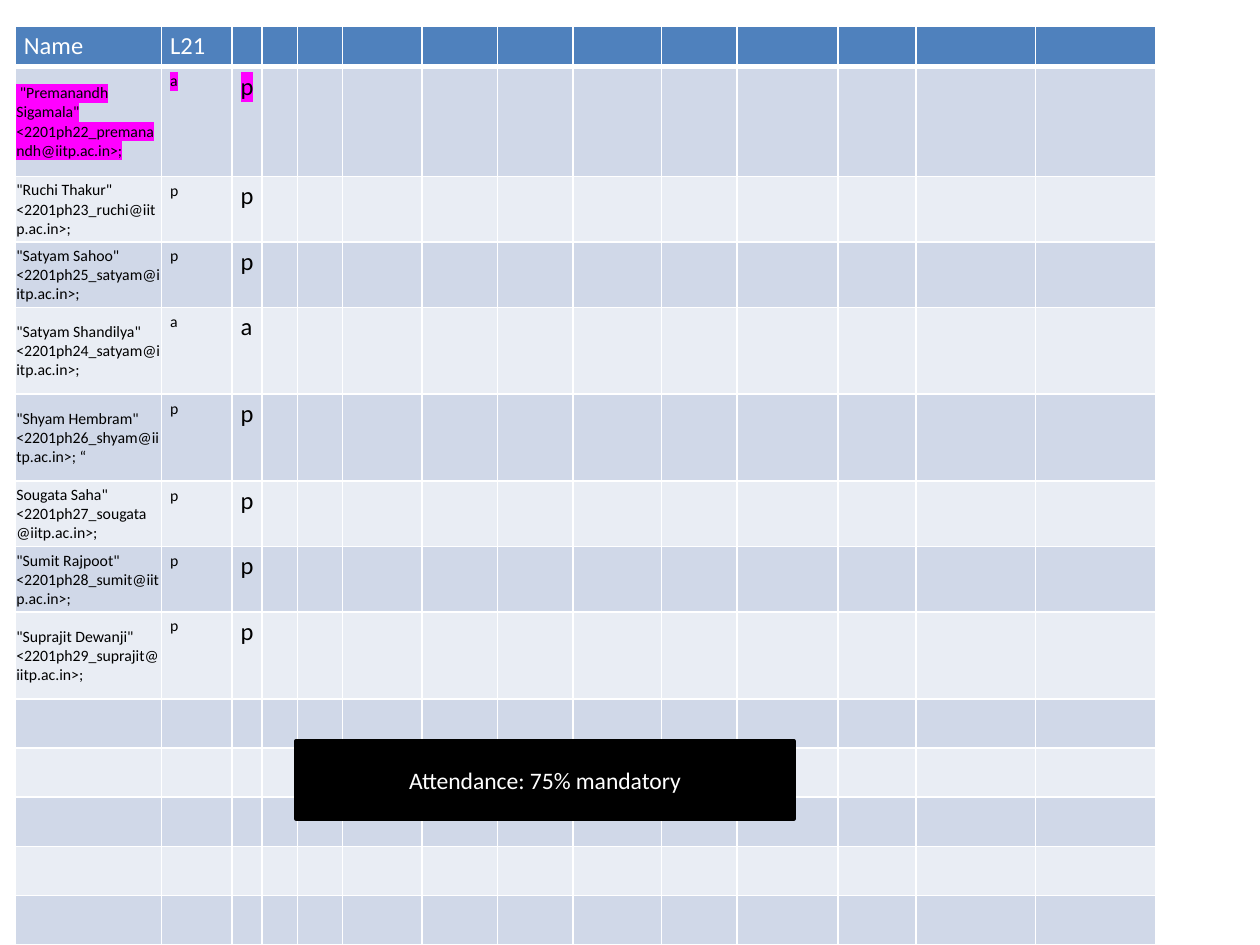
import dataclasses

import lxml.etree
import pptx
import pptx.dml.color
import pptx.enum.shapes
import pptx.enum.text
import pptx.oxml.ns
import pptx.util

Inches = pptx.util.Inches
Pt = pptx.util.Pt
RGBColor = pptx.dml.color.RGBColor
qn = pptx.oxml.ns.qn
MIDDLE = pptx.enum.text.MSO_ANCHOR.MIDDLE

FONT = "Calibri"
BLACK = RGBColor(0x00, 0x00, 0x00)
WHITE = RGBColor(0xFF, 0xFF, 0xFF)
HEADER_BLUE = RGBColor(0x4F, 0x81, 0xBD)
BANDS = (RGBColor(0xD0, 0xD8, 0xE8), RGBColor(0xE9, 0xED, 0xF4))
MAGENTA = RGBColor(0xFF, 0x00, 0xFF)

COLUMN_WIDTHS = (1.16, 0.56, 0.24, 0.28, 0.36, 0.63, 0.6,
                 0.6, 0.7, 0.6, 0.8, 0.62, 0.95, 0.95)
HEADER_HEIGHT = 0.32
EMPTY_ROW_HEIGHT = 0.39
EMPTY_ROW_COUNT = 5
CELL_MARGINS = (0.07, 0.04, 0.07, 0.04)
NAME_MARGINS = (0.01, 0.01, 0.01, 0)


@dataclasses.dataclass
class Student:
    name: str
    marks: str
    height: float
    highlight: RGBColor | None = None


STUDENTS = (
    Student(' "Premanandh Sigamala" <2201ph22_premanandh@iitp.ac.in>;', "ap", 0.87, MAGENTA),
    Student('"Ruchi Thakur" <2201ph23_ruchi@iitp.ac.in>;', "pp", 0.52),
    Student('"Satyam Sahoo" <2201ph25_satyam@iitp.ac.in>;', "pp", 0.52),
    Student('"Satyam Shandilya" <2201ph24_satyam@iitp.ac.in>;', "aa", 0.69),
    Student('"Shyam Hembram" <2201ph26_shyam@iitp.ac.in>; “', "pp", 0.69),
    Student('Sougata Saha" <2201ph27_sougata@iitp.ac.in>;', "pp", 0.52),
    Student('"Sumit Rajpoot" <2201ph28_sumit@iitp.ac.in>;', "pp", 0.52),
    Student('"Suprajit Dewanji" <2201ph29_suprajit@iitp.ac.in>;', "pp", 0.69),
)


def write_text(frame, text: str, *, size: float = 14, color: RGBColor = BLACK,
               highlight: RGBColor | None = None, alignment=None) -> None:
    paragraph = frame.paragraphs[0]
    paragraph.alignment = alignment
    run = paragraph.add_run()
    run.text = text
    run.font.size = Pt(size)
    run.font.name = FONT
    run.font.bold = False
    run.font.color.rgb = color
    if highlight is not None:
        mark = lxml.etree.Element(qn("a:highlight"))
        lxml.etree.SubElement(mark, qn("a:srgbClr"), val=str(highlight))
        run.font.fill  # the highlight follows the text fill
        run._r.rPr.find(qn("a:solidFill")).addnext(mark)


def set_borders(cell, bottom: float) -> None:
    properties = cell._tc.get_or_add_tcPr()
    widths = {"a:lnL": 1, "a:lnR": 1, "a:lnT": 1, "a:lnB": bottom}
    for position, (tag, width) in enumerate(widths.items()):
        line = lxml.etree.Element(qn(tag), w=str(Pt(width)))
        fill = lxml.etree.SubElement(line, qn("a:solidFill"))
        lxml.etree.SubElement(fill, qn("a:srgbClr"), val=str(WHITE))
        properties.insert(position, line)


def format_cell(cell, fill: RGBColor, bottom: float) -> None:
    cell.fill.solid()
    cell.fill.fore_color.rgb = fill
    set_margins(cell, CELL_MARGINS)
    set_borders(cell, bottom)
    # Keeps empty cells from stretching their row
    lxml.etree.SubElement(cell.text_frame.paragraphs[0]._p, qn("a:endParaRPr"), sz="1400")


def set_margins(cell, margins: tuple) -> None:
    (cell.margin_left, cell.margin_top,
     cell.margin_right, cell.margin_bottom) = map(Inches, margins)


def add_attendance_table(slide) -> None:
    heights = [HEADER_HEIGHT, *(student.height for student in STUDENTS)]
    heights += [EMPTY_ROW_HEIGHT] * EMPTY_ROW_COUNT
    table = slide.shapes.add_table(
        len(heights), len(COLUMN_WIDTHS), Inches(0.12), Inches(0.21),
        Inches(sum(COLUMN_WIDTHS)), Inches(sum(heights))).table
    for column, width in zip(table.columns, COLUMN_WIDTHS):
        column.width = Inches(width)
    for index, (row, height) in enumerate(zip(table.rows, heights)):
        row.height = Inches(height)
        for cell in row.cells:
            if index == 0:
                format_cell(cell, HEADER_BLUE, bottom=3)
            else:
                format_cell(cell, BANDS[(index - 1) % 2], bottom=1)

    # Header
    for column, heading in enumerate(("Name", "L21")):
        write_text(table.cell(0, column).text_frame, heading, color=WHITE)

    # Students and their marks
    for index, student in enumerate(STUDENTS, start=1):
        name_cell = table.cell(index, 0)
        set_margins(name_cell, NAME_MARGINS)
        name_cell.vertical_anchor = MIDDLE
        values = (student.name, *student.marks)
        for column, (value, size) in enumerate(zip(values, (9, 9, 14))):
            write_text(table.cell(index, column).text_frame, value,
                       size=size, highlight=student.highlight)


def add_notice(slide) -> None:
    notice = slide.shapes.add_shape(
        pptx.enum.shapes.MSO_SHAPE.RECTANGLE,
        Inches(2.35), Inches(5.88), Inches(3.95), Inches(0.62))
    notice.shadow.inherit = False
    notice.fill.solid()
    notice.fill.fore_color.rgb = BLACK
    notice.line.color.rgb = BLACK
    notice.line.width = Pt(2)
    notice.text_frame.word_wrap = True
    notice.text_frame.vertical_anchor = MIDDLE
    write_text(notice.text_frame, "Attendance: 75% mandatory", size=13.5,
               color=WHITE, alignment=pptx.enum.text.PP_ALIGN.CENTER)


def main() -> None:
    presentation = pptx.Presentation()
    presentation.slide_width = Inches(10)
    presentation.slide_height = Inches(7.5)
    slide = presentation.slides.add_slide(presentation.slide_layouts[6])
    add_attendance_table(slide)
    add_notice(slide)
    presentation.save("out.pptx")


if __name__ == "__main__":
    main()
